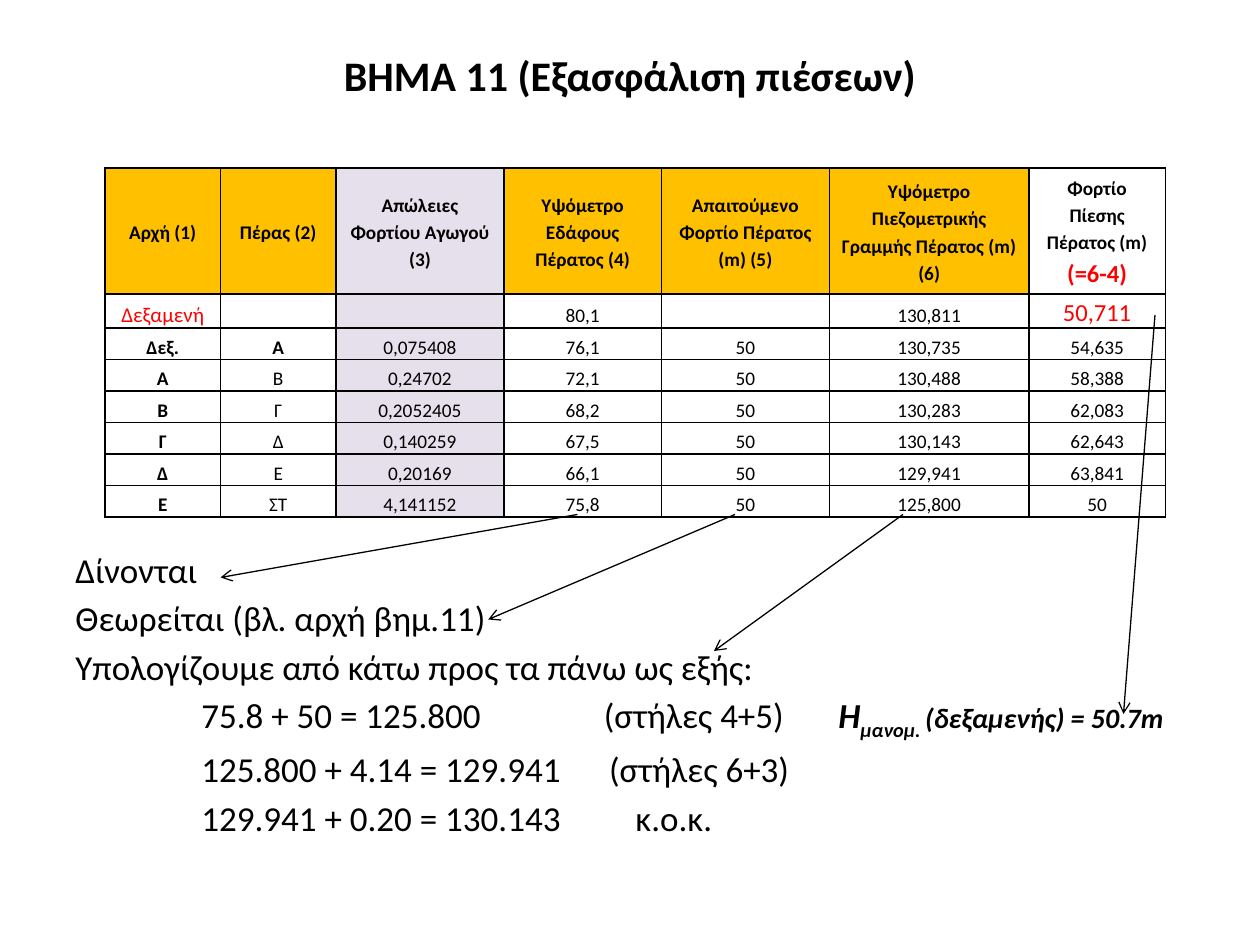
from lxml import etree
from pptx import Presentation
from pptx.dml.color import RGBColor
from pptx.enum.shapes import MSO_CONNECTOR
from pptx.enum.text import MSO_ANCHOR, PP_ALIGN
from pptx.oxml.ns import qn
from pptx.util import Pt

STRAIGHT = MSO_CONNECTOR.STRAIGHT
MIDDLE, BOTTOM = MSO_ANCHOR.MIDDLE, MSO_ANCHOR.BOTTOM
CENTER, JUSTIFY = PP_ALIGN.CENTER, PP_ALIGN.JUSTIFY

COLORS = {"black": "000000", "red": "FF0000", "gold": "FFC000", "lilac": "E6E0EC"}
FONT = "Calibri"

HEADERS = [
    "Αρχή (1)",
    "Πέρας (2)",
    "Απώλειες Φορτίου Αγωγού (3)",
    "Υψόμετρο Εδάφους Πέρατος (4)",
    "Απαιτούμενο Φορτίο Πέρατος (m) (5)",
    "Υψόμετρο Πιεζομετρικής Γραμμής Πέρατος (m) (6)",
    "Φορτίο Πίεσης Πέρατος (m)",
]
ROWS = [
    ["Δεξαμενή", "", "", "80,1", "", "130,811", "50,711"],
    ["Δεξ.", "Α", "0,075408", "76,1", "50", "130,735", "54,635"],
    ["Α", "Β", "0,24702", "72,1", "50", "130,488", "58,388"],
    ["Β", "Γ", "0,2052405", "68,2", "50", "130,283", "62,083"],
    ["Γ", "Δ", "0,140259", "67,5", "50", "130,143", "62,643"],
    ["Δ", "Ε", "0,20169", "66,1", "50", "129,941", "63,841"],
    ["Ε", "ΣΤ", "4,141152", "75,8", "50", "125,800", "50"],
]
COL_WIDTHS = [66, 66, 96, 90, 96, 114, 78]
HEADER_FILLS = ["gold", "gold", "lilac", "gold", "gold", "gold", None]
HEADER_HEIGHT, ROW_HEIGHT = 72, 18
SPECIAL = {
    (1, 0): dict(size=12, color="red"),
    (1, 6): dict(size=14, color="red"),
    (2, 1): dict(bold=True),
}

STEPS = [
    ([("Δίνονται", {})], []),
    ([("Θεωρείται (βλ. αρχή βημ.11)", {})], []),
    ([("Υπολογίζουμε από κάτω προς τα πάνω ως εξής:", {})], []),
    ([("\t75.8 + 50 = 125.800\t(στήλες 4+5)\t", {}),
      ("Η", dict(bold=True, italic=True)),
      ("μανομ. ", dict(bold=True, italic=True, baseline=-25)),
      ("(δεξαμενής) = 50.7m", dict(size=16, bold=True, italic=True))], [72, 302, 436]),
    ([("\t125.800 + 4.14 = 129.941\t(στήλες 6+3)", {})], [72, 305]),
    ([("\t129.941 + 0.20 = 130.143\tκ.ο.κ.", {})], [72, 320]),
]
ARROWS = [
    (330, 294, 126, 330),
    (420, 294, 279, 354),
    (516, 294, 408, 372),
    (660, 180, 642, 408),
]


def rgb(name):
    return RGBColor.from_string(COLORS[name])


def write(p, text, size=20, bold=False, italic=False, color="black", baseline=0):
    if not text:
        etree.SubElement(p._p, qn("a:endParaRPr")).set("sz", str(size * 100))
        return
    r = p.add_run()
    r.text = text
    r.font.name = FONT
    r.font.size = Pt(size)
    r.font.bold = bold
    r.font.italic = italic
    r.font.color.rgb = rgb(color)
    if baseline:
        r._r.get_or_add_rPr().set("baseline", str(baseline * 1000))


class SlideBuilder:
    def __init__(self, slide, line_width=0.75, border_width=1, cell_size=11):
        self.s = slide
        self.line_width = line_width
        self.border_width = border_width
        self.cell_size = cell_size

    def text(self, x, y, w, h, paragraphs, align, gap=0, **fmt):
        sp = self.s.shapes.add_textbox(Pt(x), Pt(y), Pt(w), Pt(h))
        tf = sp.text_frame
        tf.word_wrap = True
        for i, (runs, tabs) in enumerate(paragraphs):
            p = tf.add_paragraph() if i else tf.paragraphs[0]
            p.alignment = align
            if i:
                p.space_before = Pt(gap)
            if tabs:
                tab_list = etree.SubElement(p._p.get_or_add_pPr(), qn("a:tabLst"))
                for pos in tabs:
                    etree.SubElement(tab_list, qn("a:tab"), pos=str(Pt(pos)), algn="l")
            for text, extra in runs:
                write(p, text, **{**fmt, **extra})

    def cell(self, cell, lines, anchor, fill=None):
        cell.margin_left = cell.margin_right = Pt(5)
        cell.margin_top = cell.margin_bottom = 0
        cell.vertical_anchor = anchor
        tf = cell.text_frame
        for i, (text, fmt) in enumerate(lines):
            p = tf.add_paragraph() if i else tf.paragraphs[0]
            p.alignment = CENTER
            p.line_spacing = 1.15
            write(p, text, **{"size": self.cell_size, **fmt})
        tc_pr = cell._tc.get_or_add_tcPr()
        for side in ("lnL", "lnR", "lnT", "lnB"):
            ln = etree.SubElement(tc_pr, qn("a:" + side), w=str(Pt(self.border_width)))
            solid = etree.SubElement(ln, qn("a:solidFill"))
            etree.SubElement(solid, qn("a:srgbClr"), val=COLORS["black"])
        if fill:
            cell.fill.solid()
            cell.fill.fore_color.rgb = rgb(fill)
        else:
            cell.fill.background()

    def table(self, x, y):
        height = HEADER_HEIGHT + ROW_HEIGHT * len(ROWS)
        table = self.s.shapes.add_table(
            len(ROWS) + 1, len(HEADERS), Pt(x), Pt(y), Pt(sum(COL_WIDTHS)), Pt(height)
        ).table
        table.first_row = table.horz_banding = False
        for col, width in zip(table.columns, COL_WIDTHS):
            col.width = Pt(width)
        for i, row in enumerate(table.rows):
            row.height = Pt(ROW_HEIGHT if i else HEADER_HEIGHT)
        for j, header in enumerate(HEADERS):
            lines = [(header, dict(bold=True))]
            if j == len(HEADERS) - 1:
                lines.append(("(=6-4)", dict(size=14, bold=True, color="red")))
            self.cell(table.cell(0, j), lines, MIDDLE, HEADER_FILLS[j])
        for i, values in enumerate(ROWS, 1):
            for j, value in enumerate(values):
                fmt = SPECIAL.get((i, j), dict(bold=j == 0))
                fill = "lilac" if j == 2 else None
                self.cell(table.cell(i, j), [(value, fmt)], BOTTOM, fill)

    def arrow(self, x1, y1, x2, y2):
        sp = self.s.shapes.add_connector(STRAIGHT, Pt(x1), Pt(y1), Pt(x2), Pt(y2))
        sp.line.color.rgb = rgb("black")
        sp.line.width = Pt(self.line_width)
        etree.SubElement(sp.line._get_or_add_ln(), qn("a:tailEnd"), type="arrow")
        etree.SubElement(sp._element.spPr, qn("a:effectLst"))


def main():
    prs = Presentation()
    prs.slide_width, prs.slide_height = Pt(720), Pt(540)
    slide = SlideBuilder(prs.slides.add_slide(prs.slide_layouts[6]))
    title = [([("ΒΗΜΑ 11 (Εξασφάλιση πιέσεων)", {})], [])]
    slide.text(36, 25, 648, 37, title, CENTER, size=24, bold=True)
    slide.text(36, 310, 648, 180, STEPS, JUSTIFY, gap=3.6)
    slide.table(60, 96)
    for ends in ARROWS:
        slide.arrow(*ends)
    prs.save("out.pptx")


if __name__ == "__main__":
    main()
